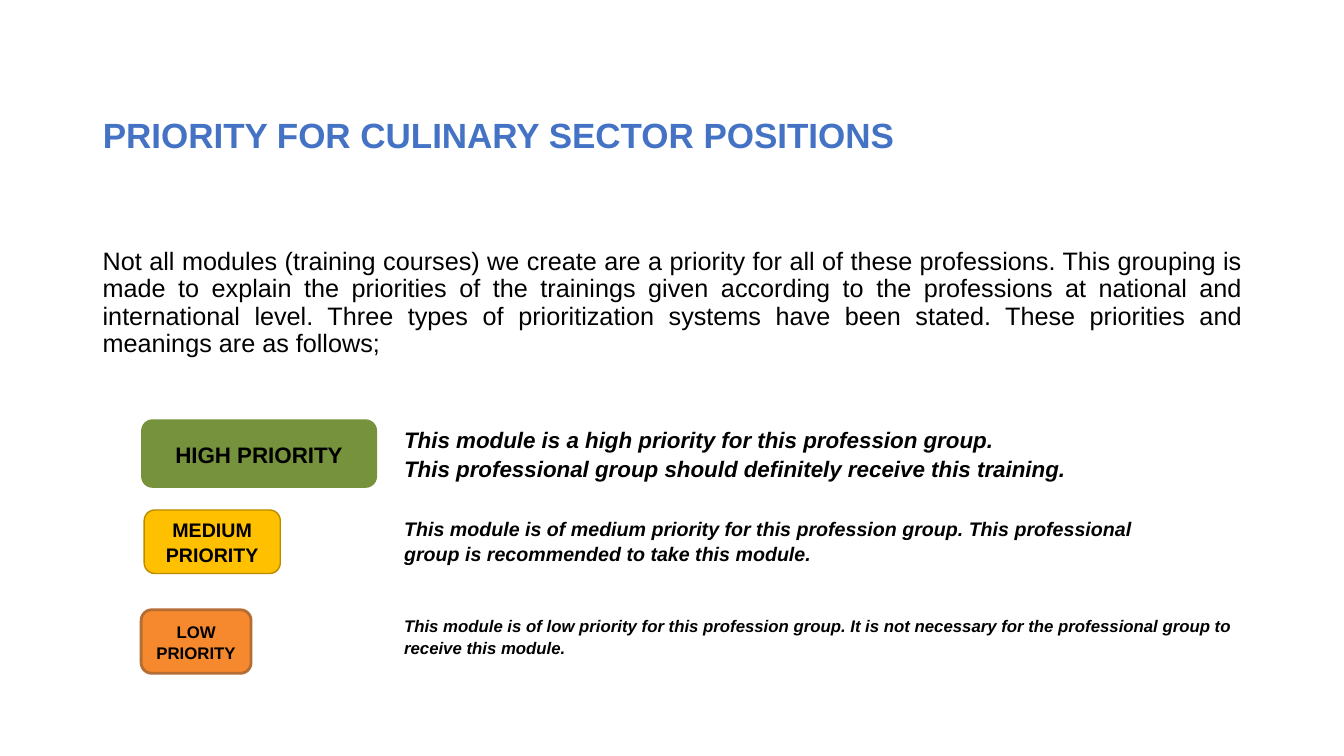
from copy import deepcopy

from pptx import Presentation, util as u
from pptx.dml.color import RGBColor
from pptx.enum import shapes, text

THEME = {
    "font": "Arial", "ink": "000000", "title": "4472C4",
    "high": "76923C", "mid": "FFC000", "low": "F6882E",
    "midline": "BA8C00", "lowline": "B46D33",
    "head": 25, "body": 18, "sizes": (16, 14, 12),
}
LEFT, WIDE = 0.92, 11.5      # main column
NOTE = 3.91                  # left edge of the explanations

# label, label box, fill, line, explanation, explanation width and height
ROWS = [
    ("HIGH PRIORITY", (1.4, 4.16, 2.34, 0.68), "high", None,
     "This module is a high priority for this profession group. \v"
     "This professional group should definitely receive this training.", 8.5, 0.68),
    ("MEDIUM PRIORITY", (1.43, 5.06, 1.35, 0.63), "mid", ("midline", 1),
     "This module is of medium priority for this profession group. "
     "This professional group is recommended to take this module.", 7.72, 0.61),
    ("LOW PRIORITY", (1.4, 6.05, 1.09, 0.63), "low", ("lowline", 2),
     "This module is of low priority for this profession group. "
     "It is not necessary for the professional group to receive this module.", 8.5, 0.53),
]
INTRO = (
    "Not all modules (training courses) we create are a priority for all of these "
    "professions. This grouping is made to explain the priorities of the trainings "
    "given according to the professions at national and international level. Three "
    "types of prioritization systems have been stated. These priorities and meanings "
    "are as follows;"
)


def color(key):
    return RGBColor.from_string(THEME[key])


def inch(box):
    return [u.Inches(v) for v in box]


def write(shape, words, size, ink="ink", space=1.07, align="LEFT", anchor="TOP", **style):
    """Put one formatted paragraph into a shape."""
    frame = shape.text_frame
    form = {
        "word_wrap": True, "auto_size": text.MSO_AUTO_SIZE.NONE,
        "vertical_anchor": text.MSO_ANCHOR[anchor],
        "margin_left": u.Inches(0.1), "margin_right": u.Inches(0.1),
        "margin_top": u.Inches(0.05), "margin_bottom": u.Inches(0.05),
    }
    for name, value in form.items():
        setattr(frame, name, value)
    para = frame.paragraphs[0]
    para.text = words
    para.alignment = text.PP_ALIGN[align]
    para.line_spacing = space
    for run in para.runs:
        for name, value in {"name": THEME["font"], "size": u.Pt(size), **style}.items():
            setattr(run.font, name, value)
        run.font.color.rgb = color(ink)
    # Line breaks take the format of the text
    for item in para.line_breaks if hasattr(para, "line_breaks") else [
            e for e in para._p if e.tag.endswith("}br")]:
        item.append(deepcopy(para.runs[0]._r.rPr))
    if words.endswith("\v"):
        end = para._p.get_or_add_endParaRPr()
        end.set("sz", str(size * 100))


def heading(slide, box):
    title = slide.shapes.title
    title.left, title.top, title.width, title.height = inch(box)
    write(title, "PRIORITY FOR CULINARY SECTOR POSITIONS\v", THEME["head"],
          "title", 0.9, anchor="MIDDLE", bold=True)


def intro(slide, box):
    write(slide.shapes.add_textbox(*inch(box)), INTRO, THEME["body"],
          space=0.9, align="JUSTIFY")


def label(slide, box, words, size, fill, line):
    shape = slide.shapes.add_shape(shapes.MSO_SHAPE.ROUNDED_RECTANGLE, *inch(box))
    shape.shadow.inherit = False
    shape.fill.solid()
    shape.fill.fore_color.rgb = color(fill)
    if line:
        shape.line.color.rgb = color(line[0])
        shape.line.width = u.Pt(line[1])
    else:
        shape.line.fill.background()
    write(shape, words, size, align="CENTER", anchor="MIDDLE", bold=True)


def legend(slide):
    for size, (name, box, fill, line, note, wide, high) in zip(THEME["sizes"], ROWS):
        label(slide, box, name, size, fill, line)
        area = slide.shapes.add_textbox(*inch((NOTE, box[1], wide, high)))
        write(area, note, size, bold=True, italic=True)


def main():
    deck = Presentation()
    deck.slide_width, deck.slide_height = inch((13.33, 7.5))
    slide = deck.slides.add_slide(deck.slide_layouts[5])
    heading(slide, (LEFT, 0.79, WIDE, 1.56))
    intro(slide, (LEFT, 2.42, WIDE, 1.56))
    legend(slide)
    deck.save("out.pptx")


if __name__ == "__main__":
    main()
